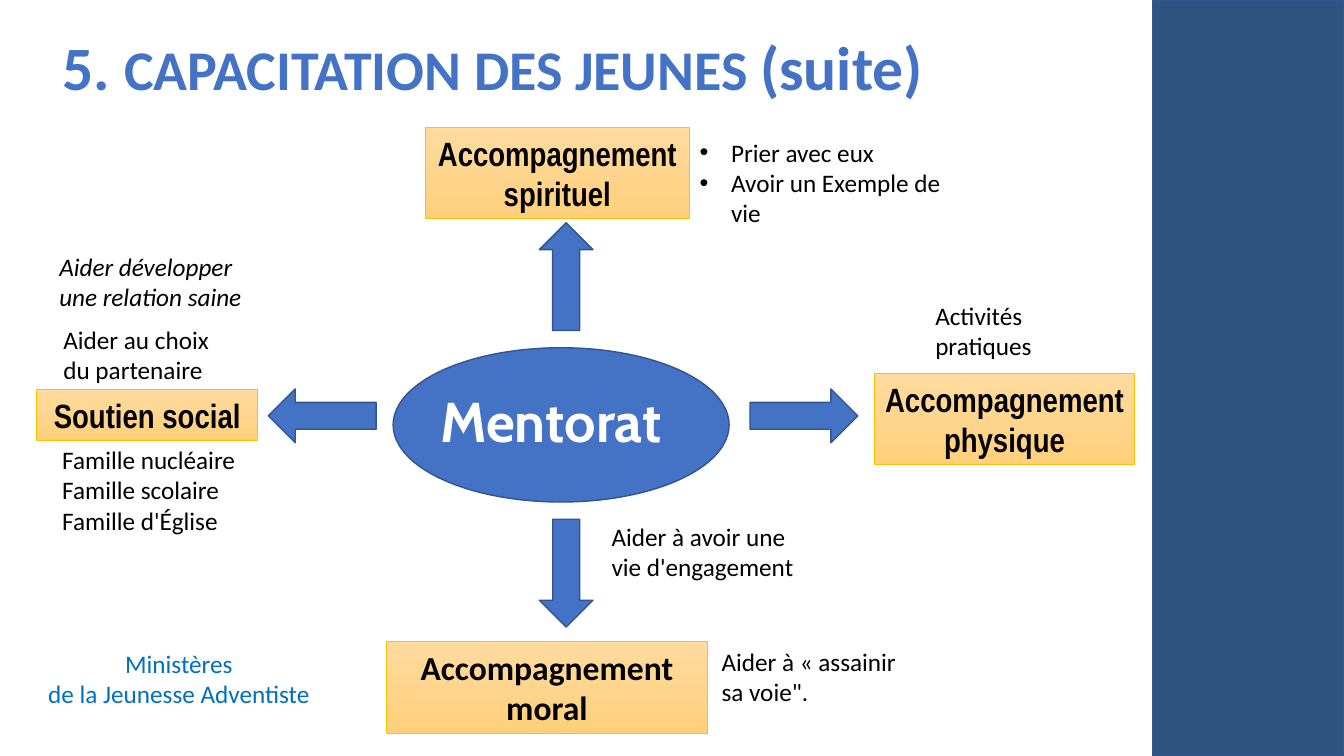
from pptx import Presentation
from pptx.dml.color import RGBColor
from pptx.enum import shapes, text
from pptx.oxml import parse_xml
from pptx.oxml.ns import nsdecls
from pptx.util import Pt

BLUE, BLUE_EDGE, NAVY = "4472C4", "325491", "2E557F"
GOLD_TOP, GOLD_BOTTOM, GOLD_EDGE = "FFDB9E", "FFD07C", "FFC000"
BLACK, WHITE, SIGNATURE = "000000", "FFFFFF", "0070C0"
KIND = shapes.MSO_SHAPE
CENTER = text.PP_ALIGN.CENTER


def colour(hex_code):
    return RGBColor.from_string(hex_code)


def place(item, box):
    item.left, item.top, item.width, item.height = (Pt(n) for n in box)


def add_run(paragraph, words, size, hex_code=BLACK, face="Calibri", bold=False, italic=False):
    run = paragraph.add_run()
    run.text = words
    font = run.font
    font.name, font.size, font.bold, font.italic = face, Pt(size), bold, italic
    font.color.rgb = colour(hex_code)


def fill_lines(frame, lines, size=18, align=None, **style):
    for i, words in enumerate(lines):
        paragraph = frame.add_paragraph() if i else frame.paragraphs[0]
        paragraph.alignment = align
        add_run(paragraph, words, size, **style)


def add_block(slide, kind, box, fill, edge, edge_width=1):
    block = slide.shapes.add_shape(kind, *(Pt(n) for n in box))
    block.shadow.inherit = False
    block.fill.solid()
    block.fill.fore_color.rgb = colour(fill)
    block.line.color.rgb = colour(edge)
    block.line.width = Pt(edge_width)
    return block


def add_arrow(slide, center_x, center_y, rotation):
    width, length = 38.4, 77
    box = (center_x - width / 2, center_y - length / 2, width, length)
    add_block(slide, KIND.UP_ARROW, box, BLUE, BLUE_EDGE).rotation = rotation


def add_theme(slide, box, words, face="Arial Narrow"):
    theme = add_block(slide, KIND.RECTANGLE, box, GOLD_TOP, GOLD_EDGE, 0.5)
    theme.fill.gradient()
    theme.fill.gradient_angle = 270
    for stop, hex_code in zip(theme.fill.gradient_stops, (GOLD_TOP, GOLD_BOTTOM)):
        stop.color.rgb = colour(hex_code)
    theme.text_frame.word_wrap = True
    fill_lines(theme.text_frame, [words], 24, CENTER, face=face, bold=True)


def add_note(slide, box, lines, wrap=True, **style):
    frame = slide.shapes.add_textbox(*(Pt(n) for n in box)).text_frame
    frame.word_wrap = wrap
    fill_lines(frame, lines, **style)


def set_title(title):
    place(title, (37.4, 18.7, 726.5, 64))
    frame = title.text_frame
    frame.vertical_anchor = text.MSO_ANCHOR.MIDDLE
    frame.auto_size = text.MSO_AUTO_SIZE.NONE
    heading = frame.paragraphs[0]
    heading.alignment = text.PP_ALIGN.LEFT
    heading.line_spacing = 0.9
    for words, size in (("5. ", 44), ("CAPACITATION DES JEUNES ", 40), ("(suite)", 44)):
        add_run(heading, words, size, BLUE, bold=True)


def set_bullets(body, box, lines):
    place(body, box)
    frame = body.text_frame
    frame.auto_size = text.MSO_AUTO_SIZE.NONE
    fill_lines(frame, lines)
    for paragraph in frame.paragraphs:
        paragraph.space_before = Pt(0)
        props = paragraph._p.get_or_add_pPr()
        props.set("marL", str(Pt(22.5)))
        props.set("indent", str(-Pt(22.5)))
        props.append(parse_xml(f'<a:buFont {nsdecls("a")} typeface="Arial"/>'))
        props.append(parse_xml(f'<a:buChar {nsdecls("a")} char="•"/>'))


def main():
    deck = Presentation()
    deck.slide_width, deck.slide_height = Pt(960), Pt(540)
    slide = deck.slides.add_slide(deck.slide_layouts[1])

    # Side band and title
    add_block(slide, KIND.RECTANGLE, (823, 0, 137, 540), NAVY, BLUE_EDGE)
    set_title(slide.shapes.title)

    # Central idea
    add_block(slide, KIND.OVAL, (280.8, 248.4, 240, 110.2), BLUE, BLUE_EDGE)
    add_note(slide, (307.4, 272.2, 188.6, 55.4), ["Mentorat"], wrap=False,
             size=40, hex_code=WHITE, face="Cabin", bold=True)

    # Arrows out to the four themes
    for center_x, center_y, rotation in (
            (404.4, 197.6, 0), (574.2, 297, 90), (404.4, 409.4, 180), (230.2, 297, 270)):
        add_arrow(slide, center_x, center_y, rotation)

    # Themes
    add_theme(slide, (303.8, 90.7, 188.6, 65.5), "Accompagnement spirituel")
    add_theme(slide, (624.6, 266.4, 185.8, 65.5), "Accompagnement physique")
    add_theme(slide, (26.3, 278.2, 157.7, 36.3), "Soutien social")
    add_theme(slide, (275.8, 458.2, 229.7, 65.5), "Accompagnement moral", face="Calibri")

    # Notes beside the themes
    set_bullets(slide.placeholders[1], (492.5, 94.3, 192.2, 94.3),
                ["Prier avec eux", "Avoir un Exemple de vie"])
    add_note(slide, (661, 211, 110.9, 51), ["Activités pratiques"])
    add_note(slide, (508.3, 458, 146.9, 51), ["Aider à « assainir sa voie\"."])
    add_note(slide, (429.8, 368.6, 150.5, 51), ["Aider à avoir une vie d'engagement"])
    add_note(slide, (35.3, 175.7, 148.3, 51), ["Aider développer une relation saine"], italic=True)
    add_note(slide, (38.2, 228.2, 133.9, 51), ["Aider au choix du partenaire"])
    add_note(slide, (37.4, 314, 146.2, 72.7),
             ["Famille nucléaire", "Famille scolaire", "Famille d'Église"])

    # Signature
    add_note(slide, (18.7, 459.4, 218.2, 51), ["Ministères", "de la Jeunesse Adventiste"],
             align=CENTER, hex_code=SIGNATURE)

    deck.save("out.pptx")


if __name__ == "__main__":
    main()
